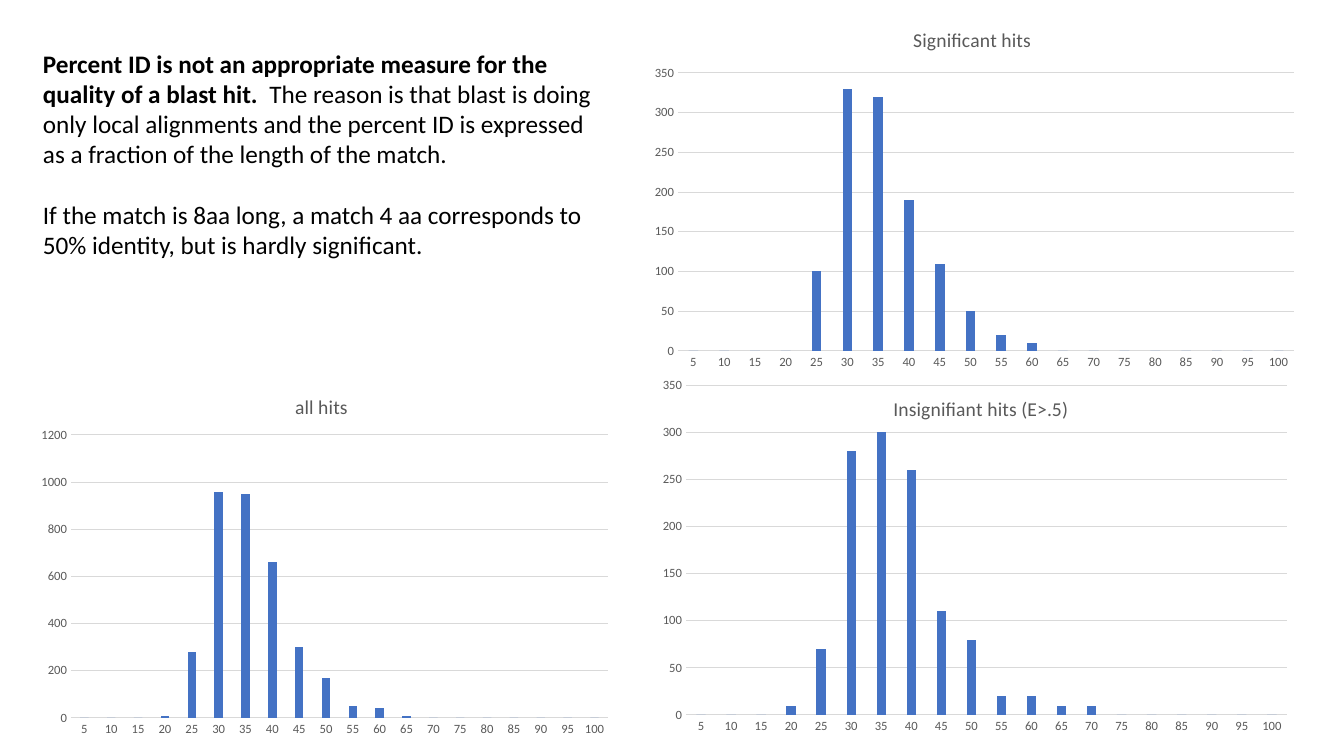
from dataclasses import dataclass

import lxml.etree
import pptx
import pptx.chart.data
import pptx.dml.color
import pptx.enum.chart
import pptx.oxml.ns
import pptx.util

SLIDE_WIDTH, SLIDE_HEIGHT = 1344, 756
EMU_PER_PX = 12192000 / SLIDE_WIDTH
FONT = "Calibri"
COLOURS = {"text": "000000", "label": "595959", "grid": "D9D9D9", "bar": "4472C4"}
IDENTITY_BINS = [str(percent) for percent in range(5, 101, 5)]


@dataclass(frozen=True)
class Box:
    left: int
    top: int
    width: int
    height: int

    def emu(self) -> list[int]:
        return [px(n) for n in (self.left, self.top, self.width, self.height)]


@dataclass(frozen=True)
class Histogram:
    title: str
    frame: Box
    plot: Box
    top_value: int
    step: int
    counts: tuple[int, ...]


HISTOGRAMS = (
    Histogram("all hits", Box(22, 377, 599, 367), Box(71, 435, 537, 283), 1200, 200,
              (0, 0, 0, 10, 280, 960, 950, 660, 300, 170,
               50, 40, 10, 0, 0, 0, 0, 0, 0, 0)),
    Histogram("Significant hits ", Box(642, 10, 665, 367), Box(678, 73, 616, 278), 350, 50,
              (0, 0, 0, 0, 100, 330, 320, 190, 110, 50,
               20, 10, 0, 0, 0, 0, 0, 0, 0, 0)),
    Histogram("Insignifiant hits (E>.5)", Box(656, 378, 650, 406), Box(686, 385, 601, 330), 350, 50,
              (0, 0, 0, 10, 70, 280, 300, 260, 110, 80,
               20, 20, 10, 10, 0, 0, 0, 0, 0, 0)),
)


def px(length: int) -> int:
    return round(length * EMU_PER_PX)


def rgb(name: str) -> pptx.dml.color.RGBColor:
    return pptx.dml.color.RGBColor.from_string(COLOURS[name])


def format_font(font, size: int, colour: str, bold: bool = False) -> None:
    font.name = FONT
    font.size = pptx.util.Pt(size)
    font.bold = bold
    font.color.rgb = rgb(colour)


def write(paragraph, text: str, *, size: int = 18, colour: str = "text",
          bold: bool = False) -> None:
    run = paragraph.add_run()
    run.text = text
    format_font(run.font, size, colour, bold)


def draw_line(line) -> None:
    line.color.rgb = rgb("grid")
    line.width = pptx.util.Pt(0.75)


def place_plot(chart, plot: Box, frame: Box) -> None:
    """Fix the inner plot area as fractions of the chart frame."""
    qn = pptx.oxml.ns.qn
    area = chart.plots[0]._element.getparent()
    for old_layout in area.findall(qn("c:layout")):
        area.remove(old_layout)
    layout = lxml.etree.Element(qn("c:layout"))
    manual = lxml.etree.SubElement(layout, qn("c:manualLayout"))
    settings = {
        "layoutTarget": "inner", "xMode": "edge", "yMode": "edge",
        "x": (plot.left - frame.left) / frame.width,
        "y": (plot.top - frame.top) / frame.height,
        "w": plot.width / frame.width,
        "h": plot.height / frame.height,
    }
    for tag, value in settings.items():
        lxml.etree.SubElement(manual, qn(f"c:{tag}")).set("val", str(value))
    area.insert(0, layout)


def draw_histogram(slide, histogram: Histogram) -> None:
    data = pptx.chart.data.CategoryChartData()
    data.categories = IDENTITY_BINS
    data.add_series("Series 1", histogram.counts)
    chart = slide.shapes.add_chart(
        pptx.enum.chart.XL_CHART_TYPE.COLUMN_CLUSTERED, *histogram.frame.emu(), data).chart
    format_font(chart.font, 10, "text")
    chart.has_legend = False
    chart.has_title = True
    write(chart.chart_title.text_frame.paragraphs[0], histogram.title, size=14, colour="label")

    bars = chart.plots[0]
    bars.vary_by_categories = False
    bars.gap_width = 219
    bars.overlap = -27
    bar_fill = bars.series[0].format.fill
    bar_fill.solid()
    bar_fill.fore_color.rgb = rgb("bar")

    for axis in (chart.category_axis, chart.value_axis):
        axis.major_tick_mark = pptx.enum.chart.XL_TICK_MARK.NONE
        axis.minor_tick_mark = pptx.enum.chart.XL_TICK_MARK.NONE
        format_font(axis.tick_labels.font, 9, "label")
    draw_line(chart.category_axis.format.line)
    counts_axis = chart.value_axis
    counts_axis.format.line.fill.background()
    draw_line(counts_axis.major_gridlines.format.line)
    counts_axis.minimum_scale = 0
    counts_axis.maximum_scale = histogram.top_value
    counts_axis.major_unit = histogram.step
    place_plot(chart, histogram.plot, histogram.frame)


def draw_explanation(slide) -> None:
    frame = slide.shapes.add_textbox(*Box(33, 43, 577, 224).emu()).text_frame
    frame.word_wrap = True
    reason = frame.paragraphs[0]
    write(reason, "Percent ID is not an appropriate measure for the quality of a blast hit.  ",
          bold=True)
    write(reason, "The reason is that blast is doing only local alignments and the percent ID "
                  "is expressed as a fraction of the length of the match.")
    example = frame.add_paragraph()
    example.space_before = pptx.util.Pt(21.5)
    write(example, "If the match is 8aa long, a match 4 aa corresponds to 50% identity, "
                   "but is hardly significant.")


def main() -> None:
    deck = pptx.Presentation()
    deck.slide_width, deck.slide_height = px(SLIDE_WIDTH), px(SLIDE_HEIGHT)
    slide = deck.slides.add_slide(deck.slide_layouts.get_by_name("Blank"))
    for histogram in HISTOGRAMS:
        draw_histogram(slide, histogram)
    draw_explanation(slide)
    deck.save("out.pptx")


if __name__ == "__main__":
    main()
